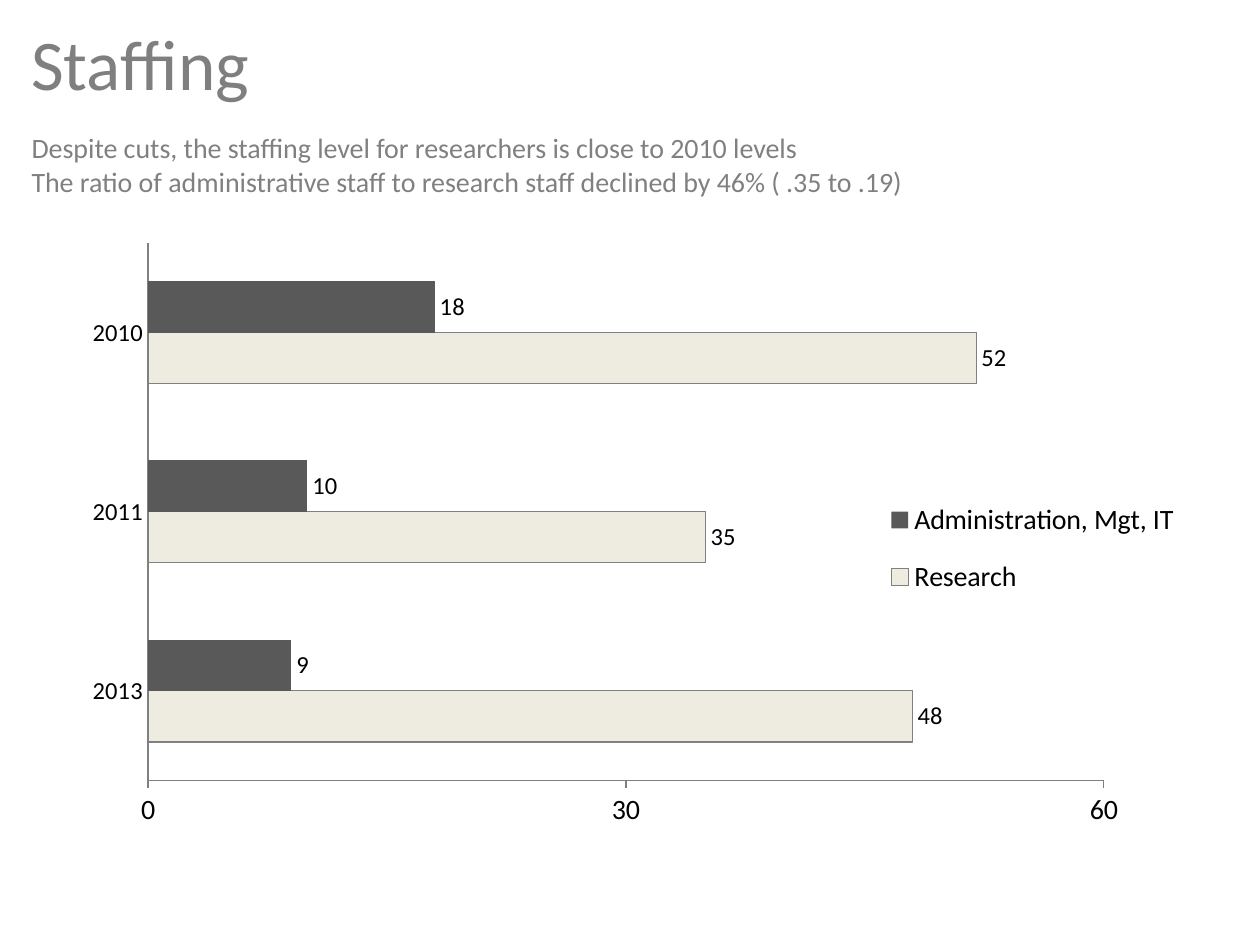
from pptx import Presentation
from pptx.chart.data import CategoryChartData
from pptx.dml.color import RGBColor
from pptx.enum.chart import (XL_CHART_TYPE, XL_LABEL_POSITION,
                             XL_LEGEND_POSITION, XL_TICK_MARK)
from pptx.enum.text import MSO_ANCHOR, MSO_AUTO_SIZE, PP_ALIGN
from pptx.oxml import parse_xml
from pptx.oxml.ns import nsdecls, qn
from pptx.util import Pt

FONT = "Calibri"
GREY = "808080"
HEADING = "Staffing"
MESSAGE = [
    "Despite cuts, the staffing level for researchers is close to 2010 levels",
    "The ratio of administrative staff to research staff declined by 46% ( .35 to .19)",
]
YEARS = [2013, 2011, 2010]
SERIES = [  # name, values, fill, outline
    ("Research", [48, 35, 52], "EEECE1", GREY),
    ("Administration, Mgt, IT", [9, 10, 18], "595959", None),
]
HEADING_BOX = (10.8, 9.4, 648, 52.5)
MESSAGE_BOX = (10.8, 62, 648, 64)
CHART_BOX = (36, 126, 648, 356.4)
PLOT_LAYOUT = (0.075, 0.036, 0.843, 0.862)
LEGEND_LAYOUT = (0.72, 0.416, 0.27, 0.22)


def color(value):
    return RGBColor.from_string(value)


def set_font(font, size, value="000000"):
    font.name, font.size, font.bold = FONT, Pt(size), False
    font.color.rgb = color(value)


def set_line(line, value):
    line.color.rgb = color(value)
    line.width = Pt(0.75)


def write(shape, lines, bounds, size, value):
    """Place a shape and fill it with one paragraph of left-aligned lines."""
    shape.left, shape.top, shape.width, shape.height = map(Pt, bounds)
    frame = shape.text_frame
    frame.word_wrap = True
    frame.auto_size = MSO_AUTO_SIZE.NONE
    frame.vertical_anchor = MSO_ANCHOR.MIDDLE
    para = frame.paragraphs[0]
    para.alignment = PP_ALIGN.LEFT
    for index, line in enumerate(lines):
        if index:
            para.add_line_break()
        span = para.add_run()
        span.text = line
        set_font(span.font, size, value)


def set_layout(parent, position, bounds, target=""):
    """Give a chart part a fixed place, as fractions of the chart."""
    for old in parent.findall(qn("c:layout")):
        parent.remove(old)
    inner = f'<c:layoutTarget val="{target}"/>' if target else ""
    modes = "".join(f'<c:{key}Mode val="edge"/>' for key in "xy")
    places = "".join(f'<c:{key} val="{part}"/>' for key, part in zip("xywh", bounds))
    parent.insert(position, parse_xml(
        f'<c:layout {nsdecls("c")}><c:manualLayout>{inner}{modes}{places}'
        '</c:manualLayout></c:layout>'))


def add_staff_chart(page):
    data = CategoryChartData()
    data.categories = YEARS
    for name, values, _, _ in SERIES:
        data.add_series(name, values)
    chart = page.shapes.add_chart(
        XL_CHART_TYPE.BAR_CLUSTERED, *map(Pt, CHART_BOX), data).chart
    set_font(chart.font, 10)
    chart.has_title = False

    plot = chart.plots[0]
    plot.gap_width, plot.overlap = 150, 0
    plot.vary_by_categories = False
    for series, (_, _, fill, outline) in zip(plot.series, SERIES):
        series.format.fill.solid()
        series.format.fill.fore_color.rgb = color(fill)
        if outline:
            set_line(series.format.line, outline)
        else:
            series.format.line.fill.background()
        labels = series.data_labels
        labels.show_value = True
        labels.position = XL_LABEL_POSITION.OUTSIDE_END
        set_font(labels.font, 14)

    for axis, size, tick in ((chart.category_axis, 14, XL_TICK_MARK.NONE),
                             (chart.value_axis, 16, XL_TICK_MARK.OUTSIDE)):
        axis.has_major_gridlines = False
        axis.major_tick_mark = tick
        axis.minor_tick_mark = XL_TICK_MARK.NONE
        set_font(axis.tick_labels.font, size)
        set_line(axis.format.line, GREY)
    scale = chart.value_axis
    scale.minimum_scale, scale.maximum_scale, scale.major_unit = 0, 60, 30

    chart.has_legend = True
    chart.legend.position = XL_LEGEND_POSITION.RIGHT
    chart.legend.include_in_layout = False
    set_font(chart.legend.font, 16)
    set_layout(chart.element.find(".//" + qn("c:plotArea")), 0, PLOT_LAYOUT, "inner")
    set_layout(chart.element.find(".//" + qn("c:legend")), 1, LEGEND_LAYOUT)


def main():
    deck = Presentation()
    deck.slide_width, deck.slide_height = Pt(720), Pt(540)
    page = deck.slides.add_slide(deck.slide_layouts[5])
    write(page.shapes.title, MESSAGE, MESSAGE_BOX, 16, GREY)
    add_staff_chart(page)
    heading = page.shapes.add_textbox(*map(Pt, HEADING_BOX))
    write(heading, [HEADING], HEADING_BOX, 40.7, "7F7F7F")
    deck.save("out.pptx")


if __name__ == "__main__":
    main()
